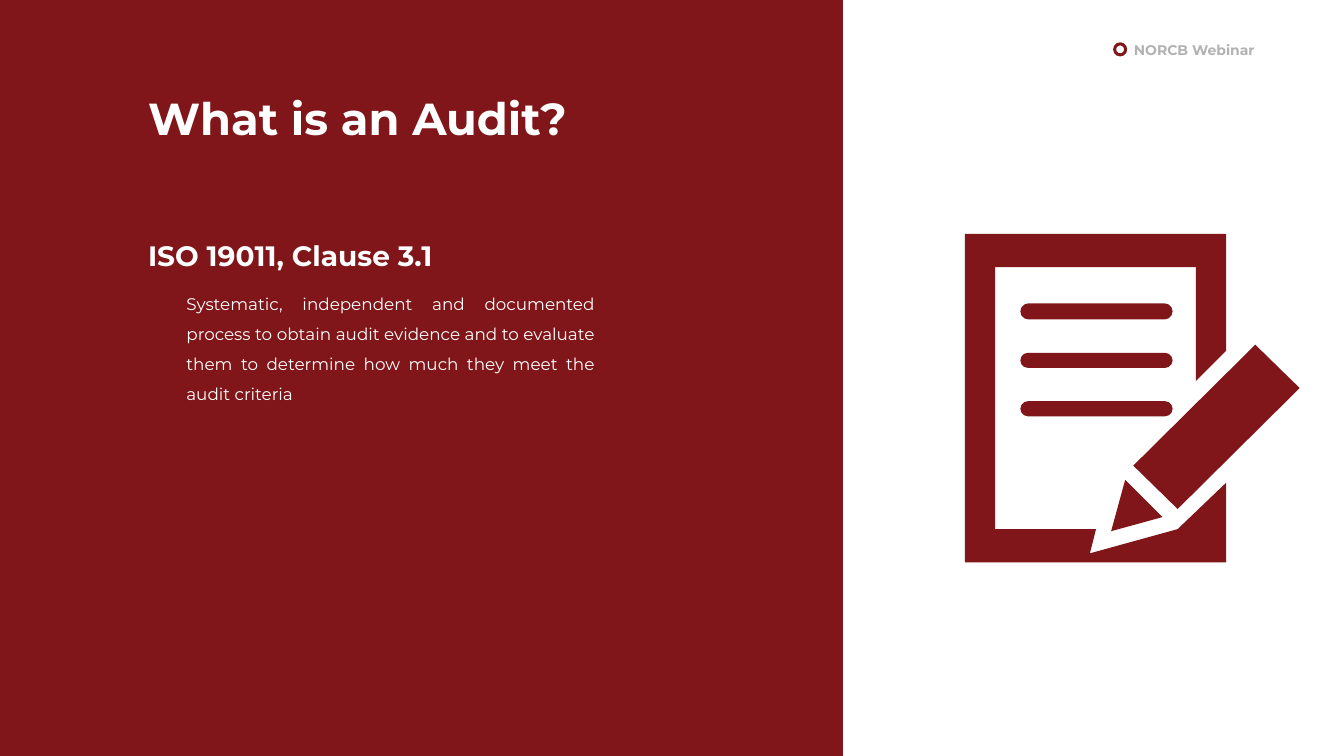
from pptx import Presentation
from pptx import util as u
from pptx.dml.color import RGBColor
from pptx.enum import shapes, text

COLORS = {"maroon": "801619", "white": "FFFFFF", "grey": "B2B2B2"}


class AuditSlide:
    font = "Montserrat"

    def __init__(self, deck):
        self.slide = deck.slides.add_slide(deck.slide_layouts[6])

    def paint(self, item):
        item.shadow.inherit = False
        item.fill.solid()
        item.fill.fore_color.rgb = RGBColor.from_string(COLORS["maroon"])
        item.line.fill.background()

    def shape(self, kind, place, adjustment=None):
        item = self.slide.shapes.add_shape(kind, *map(u.Inches, place))
        if adjustment is not None:
            item.adjustments[0] = adjustment
        self.paint(item)

    def outline(self, points):
        start, *rest = [(u.Inches(x), u.Inches(y)) for x, y in points]
        builder = self.slide.shapes.build_freeform(*start)
        builder.add_line_segments(rest, close=True)
        self.paint(builder.convert_to_shape())

    def text(self, words, place, size, color="white", bold=False,
             align=text.PP_ALIGN.LEFT, spacing=None, grow=True):
        frame = self.slide.shapes.add_textbox(*map(u.Inches, place)).text_frame
        frame.word_wrap = True
        if grow:
            frame.auto_size = text.MSO_AUTO_SIZE.SHAPE_TO_FIT_TEXT
        paragraph = frame.paragraphs[0]
        paragraph.alignment = align
        if spacing:
            paragraph.line_spacing = spacing
        run = paragraph.add_run()
        run.text = words
        run.font.name = self.font
        run.font.size = u.Pt(size)
        run.font.bold = bold
        run.font.color.rgb = RGBColor.from_string(COLORS[color])


def main():
    deck = Presentation()
    deck.slide_width = u.Inches(13.33)
    deck.slide_height = u.Inches(7.5)
    audit = AuditSlide(deck)
    kinds = shapes.MSO_SHAPE

    audit.text("NORCB Webinar", (10.94, 0.36, 1.6, 0.27), 10, "grey", True,
               text.PP_ALIGN.RIGHT)
    audit.shape(kinds.DONUT, (11.04, 0.42, 0.14, 0.14), 0.22)
    audit.shape(kinds.RECTANGLE, (0, 0, 8.36, 7.5))

    audit.text("Systematic, independent and documented process to obtain audit "
               "evidence and to evaluate them to determine how much they meet "
               "the audit criteria", (1.75, 2.76, 4.25, 1.59), 12,
               align=text.PP_ALIGN.JUSTIFY, spacing=1.5, grow=False)
    audit.text("ISO 19011, Clause 3.1", (1.37, 2.32, 5.15, 0.44), 20, bold=True)
    audit.text("What is an Audit?", (1.37, 0.85, 5.15, 0.64), 32, bold=True)

    page_frame = [(9.57, 2.32), (12.16, 2.32), (12.16, 3.48), (11.86, 3.78),
                  (11.86, 2.65), (9.87, 2.65), (9.87, 5.25), (10.87, 5.25),
                  (10.81, 5.49), (11.68, 5.25), (12.16, 4.79), (12.16, 5.58),
                  (9.57, 5.58)]
    pencil_tip = [(11.16, 4.76), (11.53, 5.13), (11.02, 5.27)]
    pencil_body = [(12.45, 3.42), (12.89, 3.85), (11.68, 5.05), (11.24, 4.62)]
    for part in (page_frame, pencil_tip, pencil_body):
        audit.outline(part)

    for top, height in ((3.01, 0.16), (3.5, 0.15), (3.98, 0.15)):
        audit.shape(kinds.ROUNDED_RECTANGLE, (10.12, top, 1.51, height), 0.5)

    deck.save("out.pptx")


if __name__ == "__main__":
    main()
